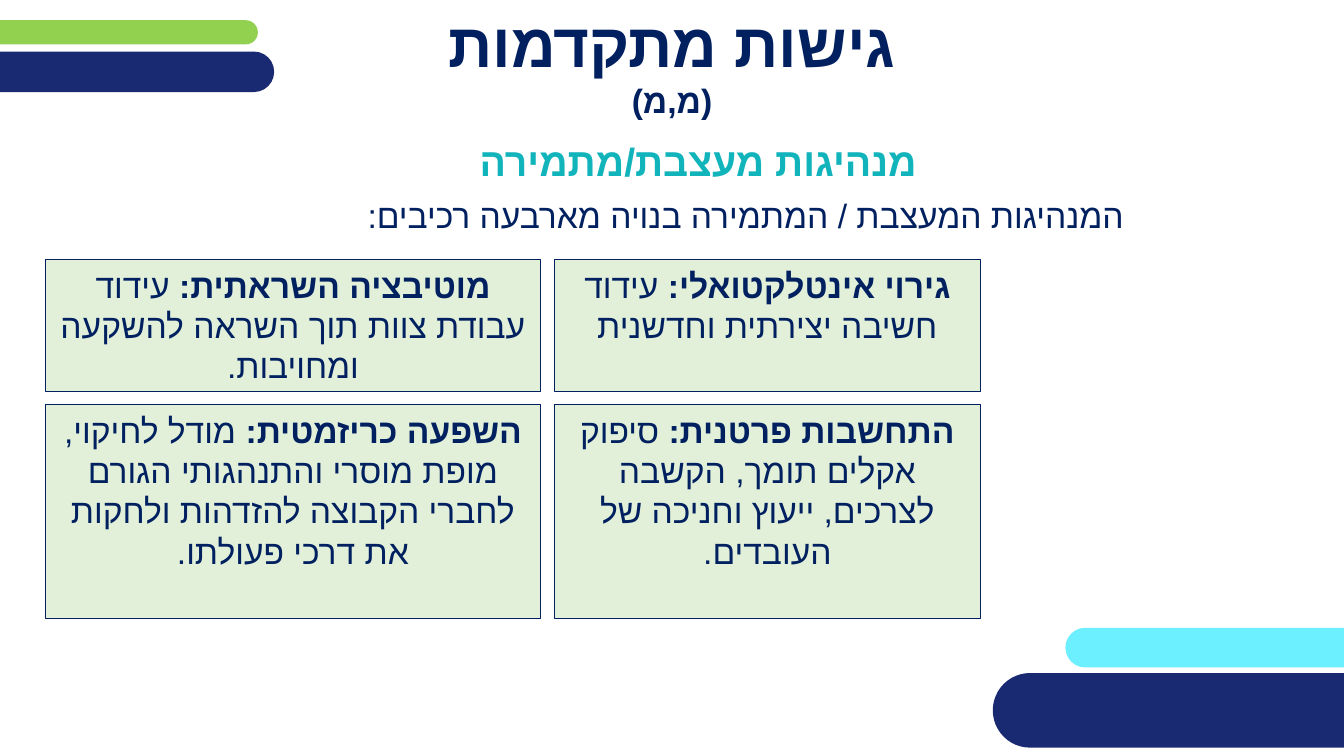
from lxml.etree import SubElement
from pptx import Presentation
from pptx.dml.color import RGBColor
from pptx.enum.shapes import MSO_SHAPE
from pptx.enum.text import MSO_ANCHOR, PP_ALIGN
from pptx.oxml.ns import qn
from pptx.util import Cm, Pt

HUES = {"navy": "192A72", "ink": "002060", "teal": "12B4BC",
        "aqua": "6CF0FF", "lime": "92D050", "mint": "E2F0D9"}
FONT = "League Spartan"
HEBREW = "Arial"
BARS = [(26.85, 15.82, 13.23, 1, "aqua"), (-0.71, 0.51, 7.21, 0.61, "lime"),
        (-1.35, 1.3, 8.26, 1.02, "navy"), (25.02, 16.96, 10.44, 1.88, "navy")]
COLS = [(1.15, 12.47), (13.97, 10.74)]
ROWS = [(6.54, 3.33), (10.2, 5.38)]
CARDS = [
    [("מוטיבציה השראתית:", "עידוד עבודת צוות תוך השראה להשקעה ומחויבות."),
     ("גירוי אינטלקטואלי:", "עידוד חשיבה יצירתית וחדשנית")],
    [("השפעה כריזמטית:", "מודל לחיקוי, מופת מוסרי והתנהגותי הגורם לחברי "
      "הקבוצה להזדהות ולחקות את דרכי פעולתו."),
     ("התחשבות פרטנית:", "סיפוק אקלים תומך, הקשבה לצרכים, ייעוץ וחניכה של "
      "העובדים.")],
]


def rgb(name):
    """Return the colour with this name."""
    return RGBColor.from_string(HUES[name])


def write(para, text, size=24, font=FONT, hue="ink", bold=False):
    """Add one Hebrew run to a paragraph."""
    run = para.add_run()
    run.text = text
    run.font.size = Pt(size)
    run.font.name = font
    run.font.bold = bold
    run.font.color.rgb = rgb(hue)
    props = run.font._element
    props.set("lang", "he-IL")
    SubElement(props, qn("a:cs")).set("typeface", HEBREW)


def start(shape, align, anchor=MSO_ANCHOR.TOP):
    """Set up a wrapped frame and return its right-to-left paragraph."""
    frame = shape.text_frame
    frame.word_wrap = True
    frame.vertical_anchor = anchor
    para = frame.paragraphs[0]
    para.alignment = align
    para._p.get_or_add_pPr().set("rtl", "1")
    return para


def draw(slide, kind, box, fill, line=None):
    """Add a flat filled shape."""
    shape = slide.shapes.add_shape(kind, *map(Cm, box))
    shape.shadow.inherit = False
    shape.fill.solid()
    shape.fill.fore_color.rgb = rgb(fill)
    if line:
        shape.line.color.rgb = rgb(line)
        shape.line.width = Pt(0.75)
    else:
        shape.line.fill.background()
    return shape


def head(slide):
    """Place and fill the title."""
    title = slide.shapes.title
    title.left, title.top, title.width, title.height = map(
        Cm, (0, 0.58, 33.87, 2.01))
    para = start(title, PP_ALIGN.CENTER, MSO_ANCHOR.MIDDLE)
    write(para, "גישות מתקדמות", size=44, bold=True)
    para.add_line_break()
    write(para, "(מ,מ)", bold=True)


def label(slide, box, text, inset=0, **form):
    """Add a right-aligned line of text."""
    shape = slide.shapes.add_textbox(*map(Cm, box))
    para = start(shape, PP_ALIGN.RIGHT, MSO_ANCHOR.MIDDLE)
    para._p.get_or_add_pPr().set("marL", str(Cm(inset)))
    write(para, text, **form)


def card(slide, box, name, text):
    """Add a bordered card with a bold lead."""
    shape = draw(slide, MSO_SHAPE.RECTANGLE, box, "mint", "ink")
    para = start(shape, PP_ALIGN.CENTER)
    write(para, name + " ", bold=True)
    write(para, text)


def main():
    """Build and save the slide."""
    deck = Presentation()
    deck.slide_width, deck.slide_height = Cm(33.87), Cm(19.05)
    slide = deck.slides.add_slide(deck.slide_layouts[5])
    for *box, hue in BARS:
        bar = draw(slide, MSO_SHAPE.ROUNDED_RECTANGLE, box, hue)
        bar.adjustments[0] = 0.5
    head(slide)
    label(slide, (1.42, 3.3, 22.43, 1.5), "מנהיגות מעצבת/מתמירה",
          inset=0.5, size=28, hue="teal", bold=True)
    label(slide, (4.88, 4.78, 23.7, 1.27),
          "המנהיגות המעצבת / המתמירה בנויה מארבעה רכיבים:", font="Calibri")
    for (top, high), row in zip(ROWS, CARDS):
        for (left, wide), (name, text) in zip(COLS, row):
            card(slide, (left, top, wide, high), name, text)
    deck.save("out.pptx")


if __name__ == "__main__":
    main()
